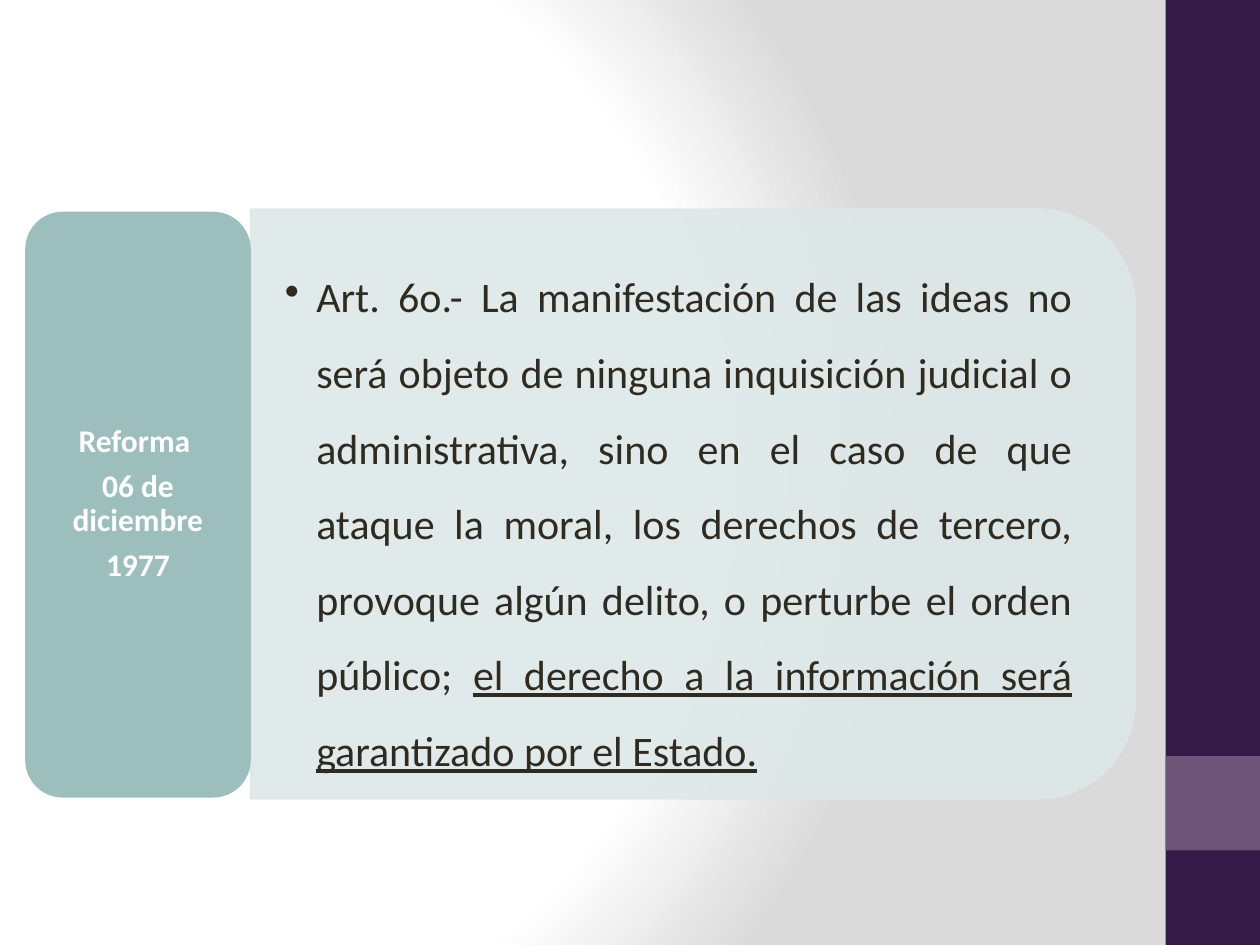
from pptx import Presentation
from pptx.dml.color import RGBColor
from pptx.enum.shapes import MSO_SHAPE as Shape
from pptx.enum.text import MSO_ANCHOR as Anchor, PP_ALIGN as Align
from pptx.oxml import parse_xml
from pptx.oxml.ns import nsdecls, qn
from pptx.util import Inches, Pt
from lxml import etree

ARTICLE = (
    "Art. 6o.- La manifestación de las ideas no será objeto de ninguna "
    "inquisición judicial o administrativa, sino en el caso de que ataque la "
    "moral, los derechos de tercero, provoque algún delito, o perturbe el "
    "orden público; "
)
ADDITION = "el derecho a la información será garantizado por el Estado."
REFORM = ["Reforma ", "06 de diciembre", "1977"]


def color(value):
    return RGBColor.from_string(value)


def style_run(run, size, value, bold=False, underline=False):
    run.font.name = "Calibri"
    run.font.size = Pt(size)
    run.font.color.rgb = color(value)
    run.font.bold = bold
    run.font.underline = underline


def add_block(slide, kind, box, fill):
    block = slide.shapes.add_shape(kind, *map(Inches, box))
    block.shadow.inherit = False
    block.fill.solid()
    block.fill.fore_color.rgb = color(fill)
    block.line.fill.background()
    return block


def add_background(slide):
    stops = "".join(
        f'<a:gs pos="{position * 1000}"><a:srgbClr val="{value}"/></a:gs>'
        for position, value in [(0, "FFFFFF"), (75, "FFFFFF"), (100, "DADADA")]
    )
    slide.element.cSld.insert(0, parse_xml(
        f'<p:bg {nsdecls("p", "a")}><p:bgPr><a:gradFill rotWithShape="1">'
        f'<a:gsLst>{stops}</a:gsLst><a:path path="circle">'
        '<a:fillToRect l="20000" t="50000" r="100000" b="50000"/></a:path>'
        '</a:gradFill><a:effectLst/></p:bgPr></p:bg>'
    ))


def add_side_band(slide, left, top, width, height):
    add_block(slide, Shape.RECTANGLE, (left, top, width, height), "341A46")
    add_block(slide, Shape.RECTANGLE, (left, top + 6, width, width), "6C5578")


def add_article(slide, left, top, width, height):
    turned_box = (left + (width - height) / 2, top + (height - width) / 2, height, width)
    panel = add_block(slide, Shape.ROUND_2_SAME_RECTANGLE, turned_box, "DEE8E8")
    panel.rotation = 90
    panel.line.color.rgb = color("DEE8E8")
    panel.line.width = Pt(1)
    for tint in panel.element.spPr.iter(qn("a:srgbClr")):
        etree.SubElement(tint, qn("a:alpha"), val="90000")

    body = slide.shapes.add_textbox(
        Inches(left), Inches(top + 0.25), Inches(width - 0.23), Inches(height - 0.44)
    )
    frame = body.text_frame
    frame.word_wrap = True
    frame.vertical_anchor = Anchor.BOTTOM
    frame.margin_left = frame.margin_right = Inches(0.27)
    frame.margin_top = frame.margin_bottom = 0
    paragraph = frame.paragraphs[0]
    properties = paragraph._p.get_or_add_pPr()
    properties.set("marL", str(Inches(0.25)))
    properties.set("indent", str(Inches(-0.25)))
    etree.SubElement(properties, qn("a:buChar"), char="•")
    paragraph.alignment = Align.JUSTIFY
    paragraph.line_spacing = 1.5
    for words, underline in [(ARTICLE, False), (ADDITION, True)]:
        run = paragraph.add_run()
        run.text = words
        style_run(run, 24, "2F2B20", underline=underline)


def add_reform_label(slide, *box):
    label = add_block(slide, Shape.ROUNDED_RECTANGLE, box, "9CBEBD")
    frame = label.text_frame
    frame.word_wrap = True
    frame.vertical_anchor = Anchor.MIDDLE
    frame.margin_left = frame.margin_right = Inches(0.07)
    frame.margin_top = frame.margin_bottom = Inches(0.04)
    frame.text = "\n".join(REFORM)
    for paragraph in frame.paragraphs:
        paragraph.alignment = Align.CENTER
        paragraph.line_spacing = 0.9
        paragraph.space_after = Pt(6.3)
        style_run(paragraph.runs[0], 18, "FFFFFF", bold=True)


def main():
    deck = Presentation()
    deck.slide_width = Inches(10)
    deck.slide_height = Inches(7.5)
    slide = deck.slides.add_slide(deck.slide_layouts[6])
    add_background(slide)
    add_side_band(slide, 9.25, 0, 0.75, 7.5)
    add_article(slide, 1.99, 1.66, 7.02, 4.68)
    add_reform_label(slide, 0.2, 1.68, 1.79, 4.65)
    deck.save("out.pptx")


if __name__ == "__main__":
    main()
